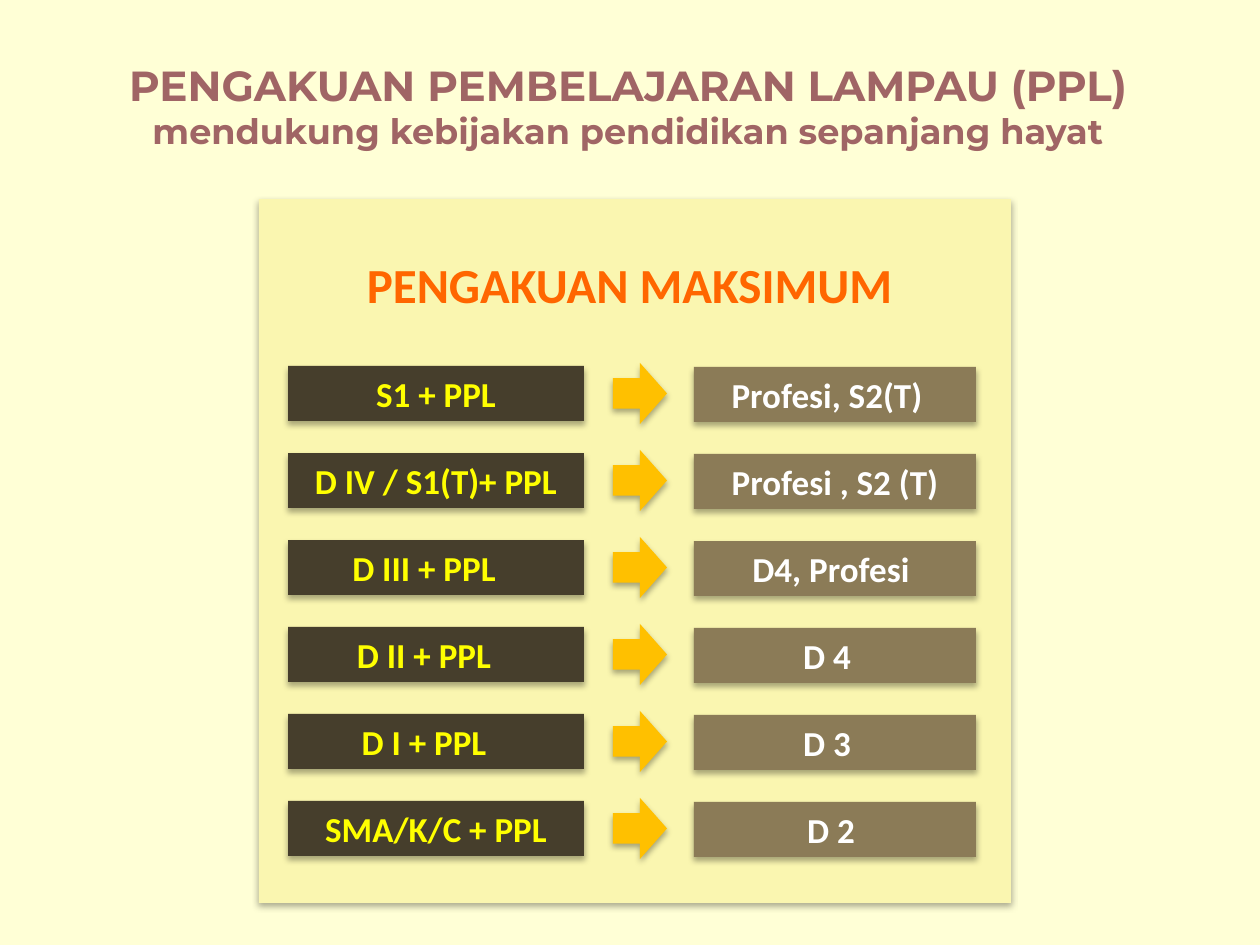
from lxml.etree import SubElement
from pptx import Presentation
from pptx.dml.color import RGBColor
from pptx.enum.shapes import MSO_SHAPE as Shape
from pptx.enum.text import MSO_ANCHOR as Anchor, PP_ALIGN as Align
from pptx.oxml.ns import qn
from pptx.util import Emu, Pt

PX = 914400 // 126
CREAM = RGBColor(0xFF, 0xFF, 0xD6)
PALE_YELLOW = RGBColor(0xFA, 0xF6, 0xB0)
ROSE = RGBColor(0xA0, 0x65, 0x65)
ORANGE = RGBColor(0xFF, 0x66, 0x00)
DARK_BROWN = RGBColor(0x46, 0x3E, 0x2C)
TAN = RGBColor(0x8B, 0x7B, 0x57)
AMBER = RGBColor(0xFF, 0xC0, 0x00)
YELLOW = RGBColor(0xFF, 0xFF, 0x00)
WHITE = RGBColor(0xFF, 0xFF, 0xFF)

INSET = 13
ROW_TOP, ROW_PITCH, ROW_HEIGHT = 366, 87, 55
RECOGNITIONS = [
    ("S1 + PPL", 0, "Profesi, S2(T)", 16),
    ("D IV / S1(T)+ PPL", 0, "Profesi , S2 (T)", 0),
    ("D III + PPL", 24, "D4, Profesi", 8),
    ("D II + PPL", 24, "D 4", 16),
    ("D I + PPL", 24, "D 3", 16),
    ("SMA/K/C + PPL", 0, "D 2", 8),
]


def px(*lengths):
    return [Emu(length * PX) for length in lengths]


def add_runs(frame, runs, font_name, color):
    frame.word_wrap = True
    paragraph = frame.paragraphs[0]
    paragraph.alignment = Align.CENTER
    for wording, size in runs:
        run = paragraph.add_run()
        run.text = wording
        run.font.name = font_name
        run.font.size = Pt(size)
        run.font.bold = True
        run.font.color.rgb = color


def add_heading(shapes, box, runs, font_name, color):
    heading = shapes.add_textbox(*px(*box))
    add_runs(heading.text_frame, runs, font_name, color)


def add_shadow(block):
    block.shadow.inherit = False
    effects = block._element.spPr.find(qn("a:effectLst"))
    shadow = SubElement(effects, qn("a:outerShdw"), blurRad=str(Pt(3.5)),
                        dist=str(Pt(2.2)), dir="5400000", rotWithShape="0")
    black = SubElement(shadow, qn("a:srgbClr"), val="000000")
    SubElement(black, qn("a:alpha"), val="32000")


def add_block(shapes, preset, box, color):
    block = shapes.add_shape(preset, *px(*box))
    block.fill.solid()
    block.fill.fore_color.rgb = color
    block.line.fill.background()
    add_shadow(block)
    return block


def add_label(shapes, box, fill, wording, color, right_indent):
    label = add_block(shapes, Shape.RECTANGLE, box, fill)
    frame = label.text_frame
    frame.vertical_anchor = Anchor.MIDDLE
    frame.margin_left, frame.margin_right = px(INSET, INSET + right_indent)
    add_runs(frame, [(wording, 20)], "Calibri", color)


def add_recognition(shapes, top, entry, entry_indent, outcome, outcome_indent):
    add_label(shapes, (288, top, 296, ROW_HEIGHT), DARK_BROWN,
              entry, YELLOW, entry_indent)
    add_block(shapes, Shape.RIGHT_ARROW, (613, top - 3, 54, 61), AMBER)
    add_label(shapes, (694, top + 1, 282, ROW_HEIGHT), TAN,
              outcome, WHITE, outcome_indent)


def main():
    deck = Presentation()
    deck.slide_width, deck.slide_height = px(1260, 945)
    slide = deck.slides.add_slide(deck.slide_layouts[6])
    slide.background.fill.solid()
    slide.background.fill.fore_color.rgb = CREAM

    add_heading(slide.shapes, (45, 53, 1166, 106),
                [("PENGAKUAN PEMBELAJARAN LAMPAU (PPL) ", 24),
                 ("mendukung kebijakan pendidikan sepanjang hayat", 20)],
                "Montserrat", ROSE)
    panel = slide.shapes.add_group_shape().shapes
    add_block(panel, Shape.RECTANGLE, (259, 199, 752, 704), PALE_YELLOW)
    add_heading(panel, (280, 248, 699, 72),
                [("PENGAKUAN MAKSIMUM", 28)], "Calibri", ORANGE)
    for index, recognition in enumerate(RECOGNITIONS):
        add_recognition(panel, ROW_TOP + index * ROW_PITCH, *recognition)

    deck.save("out.pptx")


if __name__ == "__main__":
    main()
